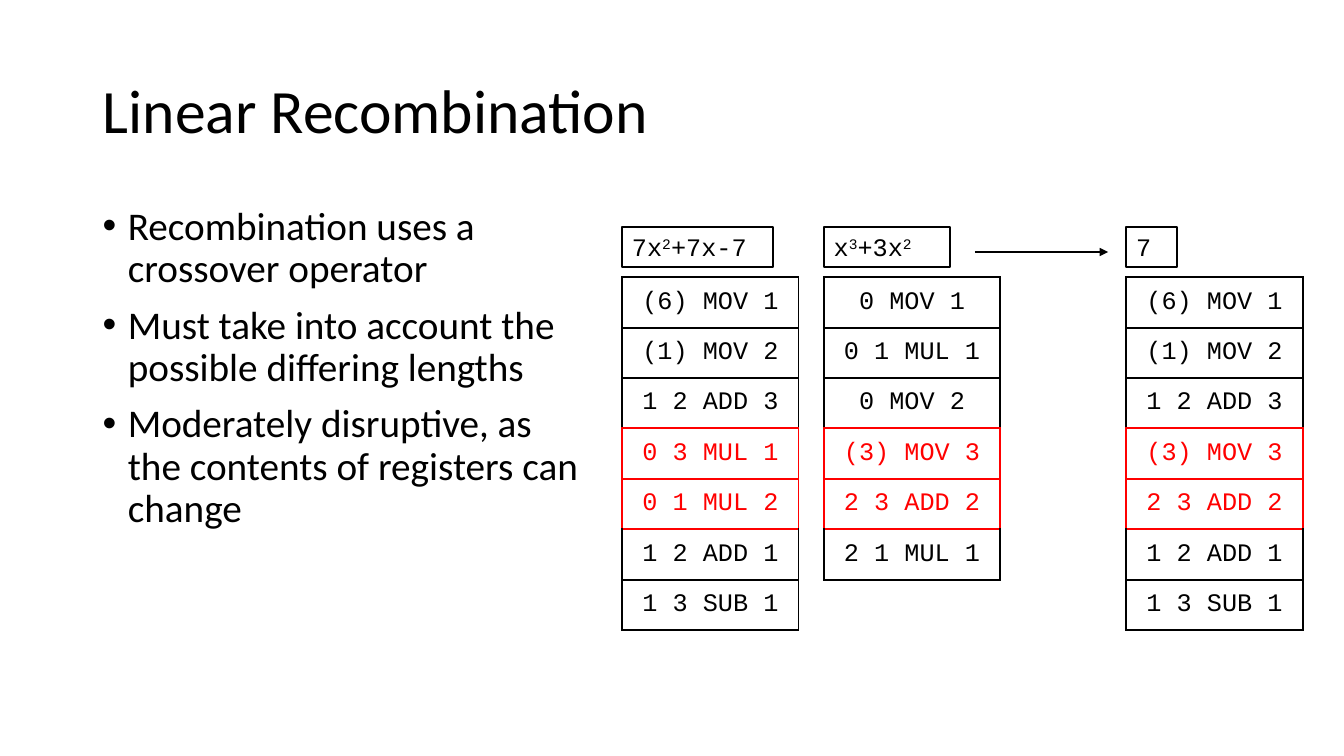
from dataclasses import dataclass

from lxml import etree
from pptx import Presentation
from pptx.dml.color import RGBColor
from pptx.enum.shapes import MSO_CONNECTOR, MSO_SHAPE
from pptx.enum.text import MSO_ANCHOR, MSO_AUTO_SIZE, PP_ALIGN
from pptx.oxml.ns import qn
from pptx.slide import Slide
from pptx.text.text import _Run
from pptx.util import Inches, Pt

BLACK = RGBColor(0, 0, 0)
RED = RGBColor(255, 0, 0)
RECT = MSO_SHAPE.RECTANGLE
STRAIGHT = MSO_CONNECTOR.STRAIGHT
LEFT, CENTER = PP_ALIGN.LEFT, PP_ALIGN.CENTER
TOP, MIDDLE = MSO_ANCHOR.TOP, MSO_ANCHOR.MIDDLE
NO_FIT, GROW = MSO_AUTO_SIZE.NONE, MSO_AUTO_SIZE.SHAPE_TO_FIT_TEXT
SANS, MONO = "Calibri", "Courier New"
LINE = Pt(1.5)
COL_W, ROW_H = 1.75, 0.5
LABEL_Y, TABLE_Y = 2.25, 2.75
SWAPPED = (3, 4)  # rows exchanged by the crossover

POINTS = (
    "Recombination uses a crossover operator",
    "Must take into account the possible differing lengths",
    "Moderately disruptive, as the contents of registers can change",
)


@dataclass
class Program:
    x: float
    label_w: float
    label: tuple[str, ...]  # every second part is an exponent
    code: tuple[str, ...]


HEAD = ("(6) MOV 1", "(1) MOV 2", "1 2 ADD 3")
TAIL = ("1 2 ADD 1", "1 3 SUB 1")
GENES = ("(3) MOV 3", "2 3 ADD 2")
PROGRAMS = (
    Program(6.17, 1.5, ("7x", "2", "+7x-7"),
            HEAD + ("0 3 MUL 1", "0 1 MUL 2") + TAIL),
    Program(8.17, 1.25, ("x", "3", "+3x", "2"),
            ("0 MOV 1", "0 1 MUL 1", "0 MOV 2") + GENES + ("2 1 MUL 1",)),
    Program(11.17, 0.5, ("7",), HEAD + GENES + TAIL),
)


def style(run: _Run, font: str, size: float, color: RGBColor = BLACK) -> None:
    run.font.name = font
    run.font.size = Pt(size)
    run.font.color.rgb = color


def add_title(slide: Slide, text: str) -> None:
    title = slide.shapes.title
    title.left, title.top = Inches(0.92), Inches(0.4)
    title.width, title.height = Inches(11.5), Inches(1.45)
    frame = title.text_frame
    frame.text = text
    frame.auto_size = NO_FIT
    frame.vertical_anchor = MIDDLE
    para = frame.paragraphs[0]
    para.alignment = LEFT
    para.line_spacing = 0.9
    style(para.runs[0], SANS, 44)


def add_points(slide: Slide) -> None:
    box = slide.shapes.add_textbox(Inches(0.92), Inches(2), Inches(5), Inches(4.76))
    frame = box.text_frame
    frame.word_wrap = True
    frame.text = "\n".join(POINTS)
    for para in frame.paragraphs:
        para.line_spacing = 0.9
        para.space_before = Pt(10)
        style(para.runs[0], SANS, 28)
        props = para._p.get_or_add_pPr()
        props.set("marL", str(Inches(0.25)))
        props.set("indent", str(-Inches(0.25)))
        etree.SubElement(props, qn("a:buFont")).set("typeface", "Arial")
        etree.SubElement(props, qn("a:buChar")).set("char", "•")


def add_label(slide: Slide, prog: Program) -> None:
    box = slide.shapes.add_shape(RECT, Inches(prog.x), Inches(LABEL_Y),
                                 Inches(prog.label_w), Inches(0.4))
    box.shadow.inherit = False
    box.fill.background()
    box.line.color.rgb = BLACK
    box.line.width = LINE
    frame = box.text_frame
    frame.word_wrap = True
    frame.auto_size = GROW
    frame.vertical_anchor = TOP
    para = frame.paragraphs[0]
    para.alignment = LEFT
    for i, part in enumerate(prog.label):
        run = para.add_run()
        run.text = part
        style(run, MONO, 18)
        if i % 2:
            run.font._element.set("baseline", "30000")


def row_color(row: int) -> RGBColor:
    return RED if row in SWAPPED else BLACK


def edge_color(upper: int) -> RGBColor:
    """Colour of the edge between a row and the next one."""
    return RED if {upper, upper + 1} & set(SWAPPED) else BLACK


def add_code(slide: Slide, prog: Program) -> None:
    count = len(prog.code)
    table = slide.shapes.add_table(count, 1, Inches(prog.x), Inches(TABLE_Y),
                                   Inches(COL_W), Inches(ROW_H * count)).table
    table.first_row = table.horz_banding = False
    for row, text in enumerate(prog.code):
        color = row_color(row)
        cell = table.cell(row, 0)
        cell.text_frame.text = text
        cell.vertical_anchor = MIDDLE
        para = cell.text_frame.paragraphs[0]
        para.alignment = CENTER
        style(para.runs[0], MONO, 18, color)
        edges = {"L": color, "R": color,
                 "T": edge_color(row - 1), "B": edge_color(row)}
        props = cell._tc.get_or_add_tcPr()
        for side, tint in edges.items():
            line = etree.SubElement(props, qn(f"a:ln{side}"), w=str(LINE))
            fill = etree.SubElement(line, qn("a:solidFill"))
            etree.SubElement(fill, qn("a:srgbClr"), val=str(tint))
        cell.fill.background()


def add_arrow(slide: Slide) -> None:
    arrow = slide.shapes.add_connector(STRAIGHT, Inches(9.67), Inches(2.5),
                                       Inches(10.99), Inches(2.5))
    arrow.line.color.rgb = BLACK
    arrow.line.width = LINE
    etree.SubElement(arrow.line._get_or_add_ln(), qn("a:tailEnd"), type="triangle")
    etree.SubElement(arrow._element.spPr, qn("a:effectLst"))


def main() -> None:
    deck = Presentation()
    deck.slide_width, deck.slide_height = Inches(13.33), Inches(7.5)
    slide = deck.slides.add_slide(deck.slide_layouts[5])

    # Text on the left
    add_title(slide, "Linear Recombination")
    add_points(slide)

    # Two parents and their child
    for prog in PROGRAMS:
        add_code(slide, prog)
        add_label(slide, prog)
    add_arrow(slide)

    deck.save("out.pptx")


if __name__ == "__main__":
    main()
